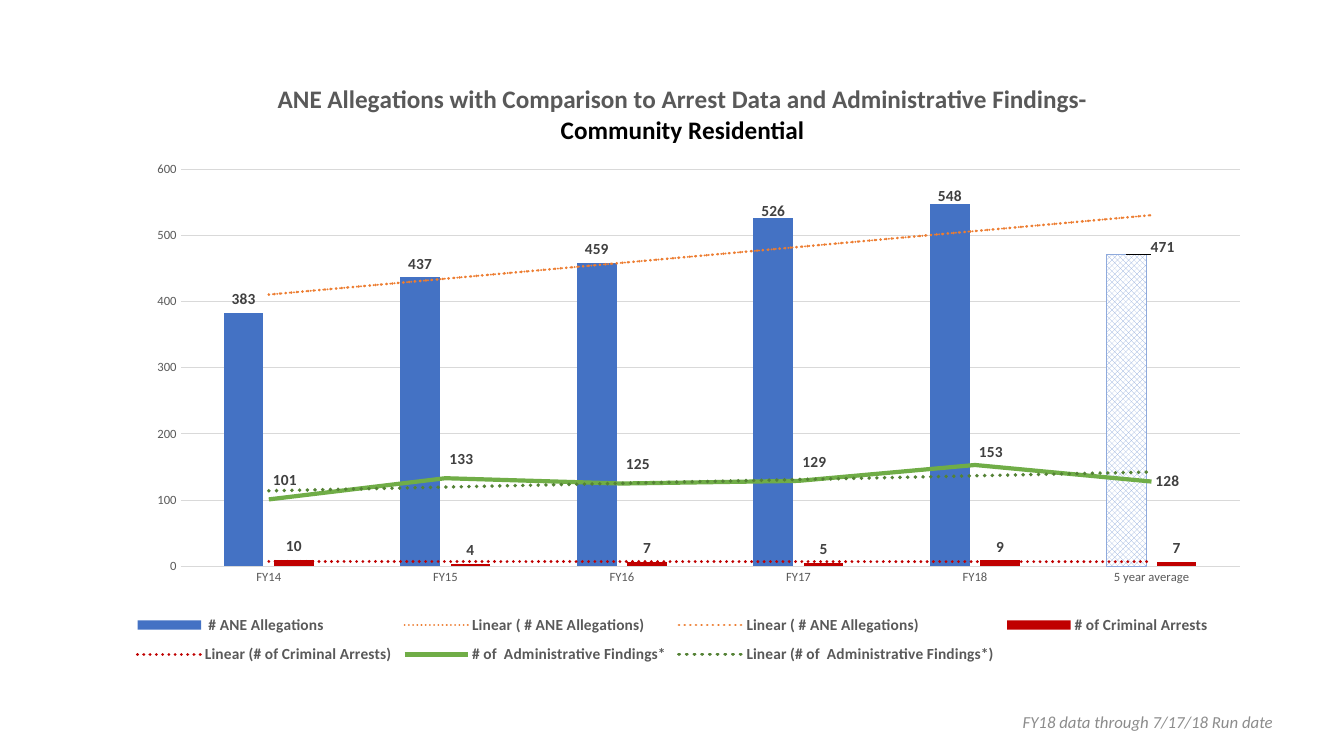
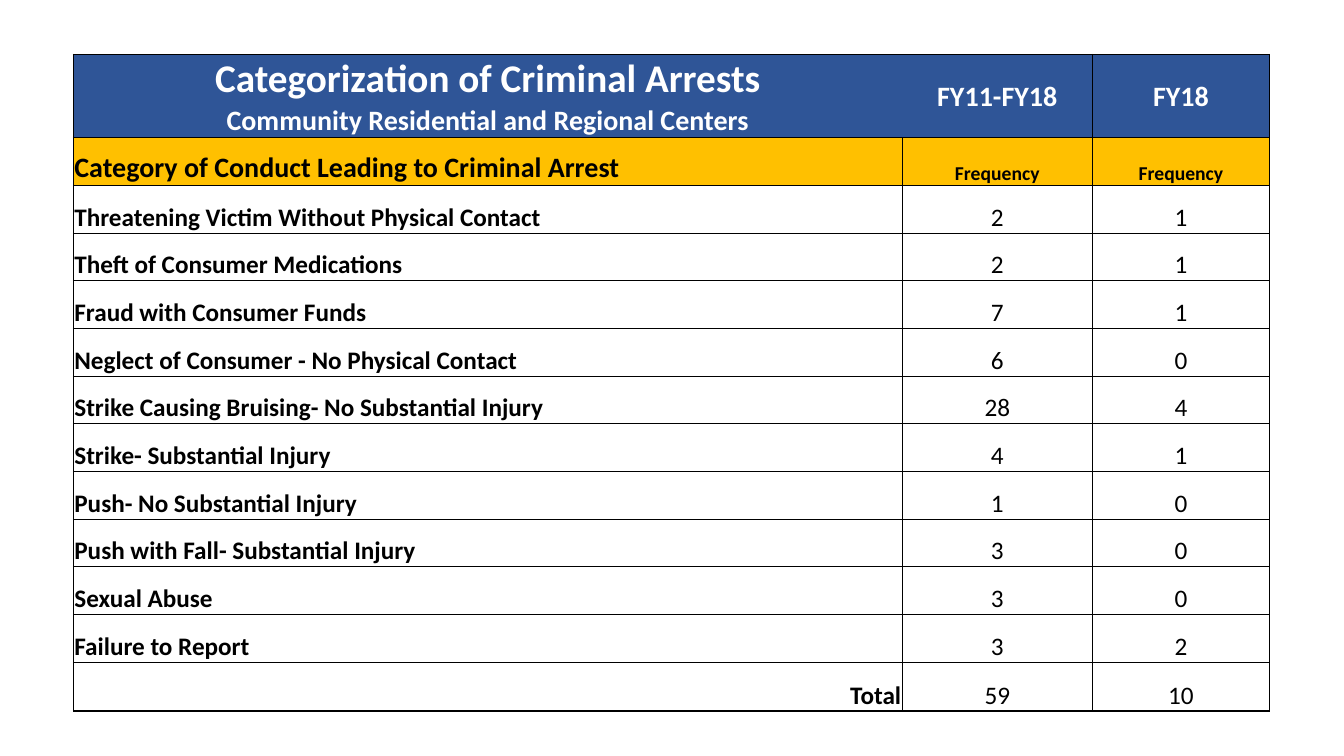
from pptx import Presentation
from pptx.chart.data import CategoryChartData
from pptx.dml.color import RGBColor
from pptx.enum.chart import XL_CHART_TYPE as ChartType
from pptx.enum.chart import XL_LABEL_POSITION as LabelPos
from pptx.enum.chart import XL_LEGEND_POSITION as LegendPos
from pptx.enum.chart import XL_MARKER_STYLE as Marker
from pptx.enum.chart import XL_TICK_MARK as Tick
from pptx.enum.dml import MSO_PATTERN as Pattern
from pptx.enum.text import MSO_ANCHOR as Anchor
from pptx.enum.text import PP_ALIGN as Align
from pptx.oxml import parse_xml
from pptx.oxml.ns import nsdecls
from pptx.util import Pt

# Shared style
FONT = "Calibri"
BLACK = RGBColor(0x00, 0x00, 0x00)
WHITE = RGBColor(0xFF, 0xFF, 0xFF)
GREY = RGBColor(0x59, 0x59, 0x59)
LABEL_GREY = RGBColor(0x40, 0x40, 0x40)
NOTE_GREY = RGBColor(0x8C, 0x8C, 0x8C)
GRID_GREY = RGBColor(0xD9, 0xD9, 0xD9)
BLUE = RGBColor(0x44, 0x72, 0xC4)
LIGHT_BLUE = RGBColor(0x8F, 0xAA, 0xDC)
HEADER_BLUE = RGBColor(0x2F, 0x55, 0x97)
RED = RGBColor(0xC0, 0x00, 0x00)
GREEN = RGBColor(0x70, 0xAD, 0x47)
DARK_GREEN = RGBColor(0x54, 0x82, 0x35)
ORANGE = RGBColor(0xED, 0x7D, 0x31)
GOLD = RGBColor(0xFF, 0xC0, 0x00)

# Chart content
YEARS = ["FY14", "FY15", "FY16", "FY17", "FY18", "5 year average"]
SERIES = [
    (" # ANE Allegations", [383, 437, 459, 526, 548, 471]),
    ("# of Criminal Arrests", [10, 4, 7, 5, 9, 7]),
    ("# of  Administrative Findings*", [101, 133, 125, 129, 153, 128]),
]
# Label shifts by point, as fractions of the chart size
ALLEGATION_SHIFTS = {3: (0, 0.01), 4: (0, 0.01), 5: (0.03, 0.01)}
FINDING_SHIFTS = {0: (0, -0.03), 1: (0, -0.03), 2: (0, -0.03),
                  3: (0, -0.03), 4: (0, -0.02)}

# Table content
ARRESTS = [
    ("Threatening Victim Without Physical Contact", 2, 1),
    ("Theft of Consumer Medications", 2, 1),
    ("Fraud with Consumer Funds", 7, 1),
    ("Neglect of Consumer - No Physical Contact", 6, 0),
    ("Strike Causing Bruising- No Substantial Injury", 28, 4),
    ("Strike- Substantial Injury", 4, 1),
    ("Push- No Substantial Injury", 1, 0),
    ("Push with Fall- Substantial Injury", 3, 0),
    ("Sexual Abuse", 3, 0),
    ("Failure to Report", 3, 2),
    ("Total", 59, 10),
]
COL_WIDTHS = [592, 136, 126.4]
HEADER_HEIGHT, ROW_HEIGHT, TOTAL_HEIGHT = 59.5, 34.05, 35


def style(font, size, color, bold=False, italic=False):
    font.name, font.size = FONT, Pt(size)
    font.bold, font.italic = bold, italic
    font.color.rgb = color


def add_note(s, text, left, top, width, height):
    tf = s.shapes.add_textbox(Pt(left), Pt(top), Pt(width), Pt(height)).text_frame
    tf.word_wrap = True
    tf.vertical_anchor = Anchor.MIDDLE
    tf.text = text
    p = tf.paragraphs[0]
    p.alignment = Align.RIGHT
    style(p.runs[0].font, 12, NOTE_GREY, italic=True)


# Chart parts
def layout(x, y, w=None, h=None, inner=False, absolute=True):
    parts = '<c:layoutTarget val="inner"/>' if inner else ""
    if absolute:
        parts += '<c:xMode val="edge"/><c:yMode val="edge"/>'
    parts += f'<c:x val="{x}"/><c:y val="{y}"/>'
    if w:
        parts += f'<c:w val="{w}"/><c:h val="{h}"/>'
    return parse_xml(f'<c:layout {nsdecls("c")}><c:manualLayout>{parts}'
                     '</c:manualLayout></c:layout>')


def drop_all(parent, query):
    for el in parent.xpath(query):
        el.getparent().remove(el)


def move_last_series_to_line(chart):
    bars = chart.element.xpath(".//c:barChart")[0]
    ser = bars.xpath("c:ser")[-1]
    drop_all(ser, "c:invertIfNegative")
    axes = "".join(f'<c:axId val="{v}"/>' for v in bars.xpath("c:axId/@val"))
    line = parse_xml(f'<c:lineChart {nsdecls("c")}><c:grouping val="standard"/>'
                     f'<c:varyColors val="0"/><c:marker val="1"/>{axes}</c:lineChart>')
    line.insert(2, ser)
    bars.addnext(line)


def add_trend(series, color, width):
    series._element.xpath("c:cat")[0].addprevious(parse_xml(
        f'<c:trendline {nsdecls("c", "a")}><c:spPr><a:ln w="{Pt(width)}" cap="rnd">'
        f'<a:solidFill><a:srgbClr val="{color}"/></a:solidFill>'
        '<a:prstDash val="sysDot"/></a:ln></c:spPr><c:trendlineType val="linear"/>'
        '<c:dispRSqr val="0"/><c:dispEq val="0"/></c:trendline>'))


def add_labels(series, position, shifts):
    labels = series.data_labels
    labels.show_value = True
    labels.position = position
    style(labels.font, 11, LABEL_GREY, bold=True)
    for i, (dx, dy) in shifts.items():
        label = series.points[i].data_label
        label.position = position
        style(label.font, 11, LABEL_GREY, bold=True)
        idx = series._element.xpath(f'c:dLbls/c:dLbl/c:idx[@val="{i}"]')[0]
        idx.addnext(layout(dx, dy, absolute=False))
    drop_all(series._element, ".//c:showLeaderLines")


def format_axes(chart):
    for axis in (chart.category_axis, chart.value_axis):
        axis.major_tick_mark = axis.minor_tick_mark = Tick.NONE
        style(axis.tick_labels.font, 9, GREY)
    value = chart.value_axis
    value.minimum_scale, value.maximum_scale, value.major_unit = 0, 600, 100
    value.format.line.fill.background()
    value.has_major_gridlines = True
    for line in (chart.category_axis.format.line, value.major_gridlines.format.line):
        line.color.rgb = GRID_GREY
        line.width = Pt(0.75)


def format_title(chart, lines):
    chart.has_title = True
    tf = chart.chart_title.text_frame
    tf.text = "\n".join(lines)
    for p, color in zip(tf.paragraphs, (GREY, BLACK)):
        p.alignment = Align.CENTER
        style(p.runs[0].font, 18, color, bold=True)
    title = chart.element.xpath("c:chart/c:title")[0]
    drop_all(title, "c:layout")
    title.xpath("c:tx")[0].addnext(layout(0.17, 0.03))


def format_legend(chart):
    chart.has_legend = True
    chart.legend.position = LegendPos.BOTTOM
    chart.legend.include_in_layout = False
    style(chart.legend.font, 11, GREY, bold=True)
    legend = chart.element.xpath("c:chart/c:legend")[0]
    drop_all(legend, "c:layout")
    pos = legend.xpath("c:legendPos")[0]
    pos.addnext(layout(0.05, 0.86, 0.9, 0.11))
    # The second allegations trend has no entry of its own
    pos.addnext(parse_xml(f'<c:legendEntry {nsdecls("c")}><c:idx val="4"/>'
                          '<c:delete val="1"/></c:legendEntry>'))


def add_allegations_chart(s):
    data = CategoryChartData()
    data.categories = YEARS
    for name, values in SERIES:
        data.add_series(name, values)
    chart = s.shapes.add_chart(ChartType.COLUMN_CLUSTERED, Pt(49.7), Pt(43.2),
                               Pt(861.8), Pt(452.2), data).chart
    style(chart.font, 10, BLACK)
    move_last_series_to_line(chart)
    columns, lines = chart.plots
    columns.gap_width, columns.overlap = 219, -27
    columns.vary_by_categories = False

    # Columns
    allegations, arrests = columns.series
    for series, color, shifts in ((allegations, BLUE, ALLEGATION_SHIFTS),
                                  (arrests, RED, {})):
        series.invert_if_negative = False
        series.format.fill.solid()
        series.format.fill.fore_color.rgb = color
        add_labels(series, LabelPos.OUTSIDE_END, shifts)
    average = allegations.points[5].format
    average.fill.patterned()
    average.fill.pattern = Pattern.SOLID_DIAMOND
    average.fill.fore_color.rgb = LIGHT_BLUE
    average.fill.back_color.rgb = WHITE
    average.line.color.rgb = LIGHT_BLUE
    average.line.width = Pt(0.75)

    # Line
    findings = lines.series[0]
    findings.smooth = False
    findings.marker.style = Marker.NONE
    findings.format.line.color.rgb = GREEN
    findings.format.line.width = Pt(3)
    add_labels(findings, LabelPos.RIGHT, FINDING_SHIFTS)

    for series, color, width in ((allegations, ORANGE, 1.5), (allegations, ORANGE, 2),
                                 (arrests, RED, 2.25), (findings, DARK_GREEN, 2.75)):
        add_trend(series, color, width)

    format_axes(chart)
    format_title(chart, [
        "ANE Allegations with Comparison to Arrest Data and Administrative Findings-",
        "Community Residential"])
    format_legend(chart)
    plot_area = chart.element.xpath("c:chart/c:plotArea")[0]
    drop_all(plot_area, "c:layout")
    plot_area.insert(0, layout(0.092, 0.172, 0.878, 0.627, inner=True))


# Table parts
def set_borders(cell, left=1, right=1, top=0.5, bottom=0.5):
    sides = {"lnL": left, "lnR": right, "lnT": top, "lnB": bottom}
    tc_pr = cell._tc.get_or_add_tcPr()
    for i, (tag, width) in enumerate(sides.items()):
        fill = (f'<a:solidFill><a:srgbClr val="{BLACK}"/></a:solidFill>'
                if width else "<a:noFill/>")
        tc_pr.insert(i, parse_xml(
            f'<a:{tag} {nsdecls("a")} w="{Pt(width)}">{fill}</a:{tag}>'))


def fill_cell(cell, text, sizes, color=BLACK, bold=True, align=Align.CENTER,
              fill=None, anchor=Anchor.BOTTOM, **borders):
    cell.margin_left = cell.margin_right = cell.margin_top = Pt(0.72)
    cell.margin_bottom = Pt(0)
    cell.vertical_anchor = anchor
    if fill is None:
        cell.fill.background()
    else:
        cell.fill.solid()
        cell.fill.fore_color.rgb = fill
    set_borders(cell, **borders)
    cell.text_frame.text = text
    for p, size in zip(cell.text_frame.paragraphs, sizes):
        p.alignment = align
        style(p.runs[0].font, size, color, bold)


def add_arrests_table(s):
    heights = ([HEADER_HEIGHT] + [ROW_HEIGHT] * len(ARRESTS) + [TOTAL_HEIGHT])
    table = s.shapes.add_table(len(heights), len(COL_WIDTHS), Pt(52.4), Pt(38.9),
                               Pt(sum(COL_WIDTHS)), Pt(sum(heights))).table
    table.first_row = table.horz_banding = False
    for col, width in zip(table.columns, COL_WIDTHS):
        col.width = Pt(width)
    for row, height in zip(table.rows, heights):
        row.height = Pt(height)

    # Heading rows
    headings = [
        ("Categorization of Criminal Arrests\nCommunity Residential and Regional Centers",
         (28, 20), 1, 0),
        ("FY11-FY18", (20,), 0, 1),
        ("FY18", (20,), 1, 1),
    ]
    for c, (text, sizes, left, right) in enumerate(headings):
        fill_cell(table.cell(0, c), text, sizes, WHITE, fill=HEADER_BLUE,
                  anchor=Anchor.MIDDLE, left=left, right=right, top=1, bottom=1)
    subheads = [("Category of Conduct Leading to Criminal Arrest", 20, Align.LEFT),
                ("Frequency", 14, Align.CENTER), ("Frequency", 14, Align.CENTER)]
    for c, (text, size, align) in enumerate(subheads):
        fill_cell(table.cell(1, c), text, (size,), align=align, fill=GOLD, top=1)

    # Categories and total
    for r, values in enumerate(ARRESTS, start=2):
        is_total = r == len(heights) - 1
        name_align = Align.RIGHT if is_total else Align.LEFT
        for c, value in enumerate(values):
            fill_cell(table.cell(r, c), str(value), (18,), bold=c == 0,
                      align=Align.CENTER if c else name_align,
                      bottom=1 if is_total else 0.5)


def main():
    prs = Presentation()
    prs.slide_width, prs.slide_height = Pt(960), Pt(540)
    blank = prs.slide_layouts[6]

    s = prs.slides.add_slide(blank)
    add_note(s, "FY18 data through 7/17/18 Run date", 592.5, 501, 324, 28.8)
    add_allegations_chart(s)

    s = prs.slides.add_slide(blank)
    add_arrests_table(s)

    prs.save("out.pptx")


if __name__ == "__main__":
    main()
